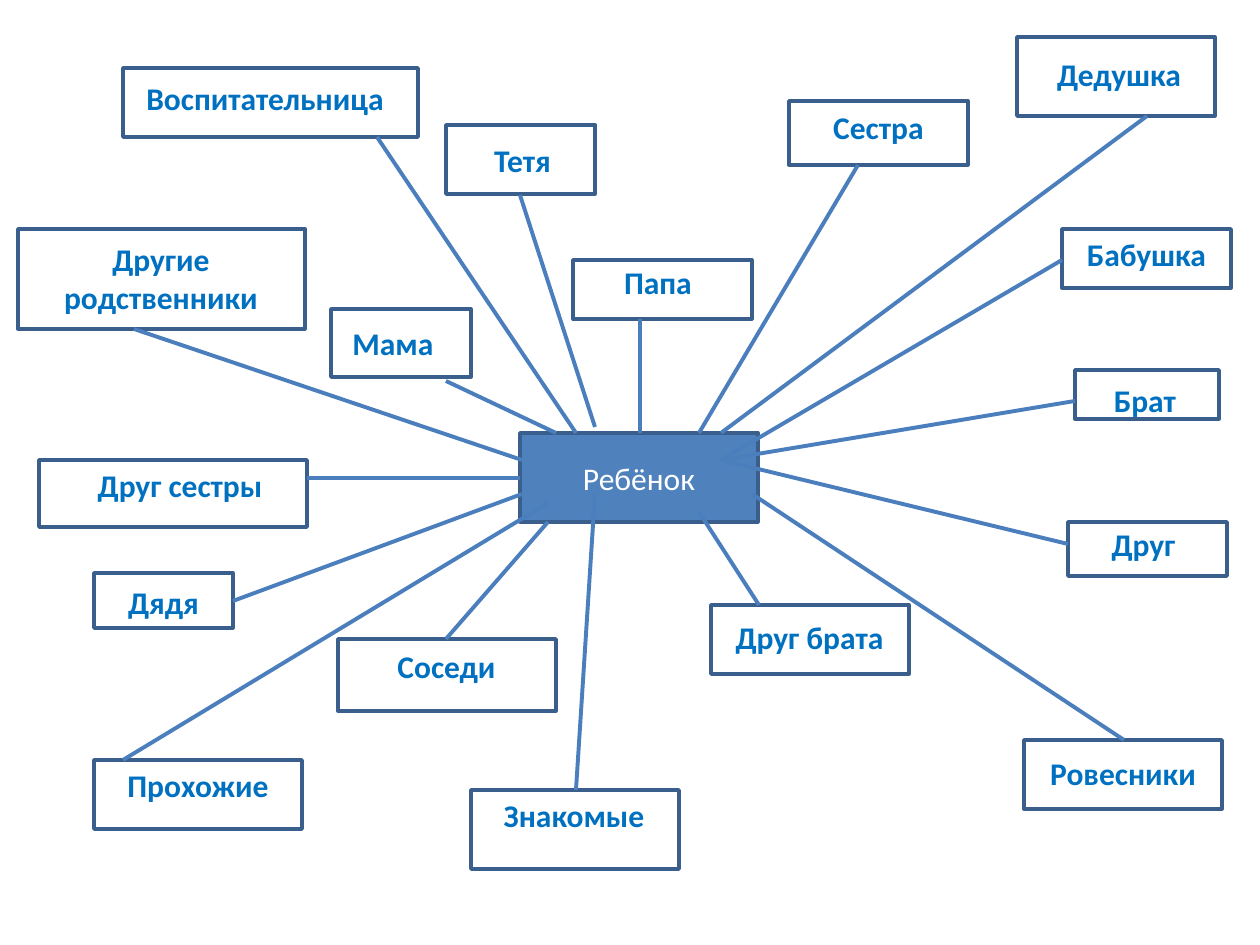
from dataclasses import dataclass
from typing import NamedTuple

from lxml import etree
from pptx import Presentation
from pptx.dml.color import RGBColor
from pptx.enum import shapes, text
from pptx.oxml.ns import qn
from pptx.util import Emu, Pt

PX = 914400 / 126


@dataclass(frozen=True)
class Theme:
    font: str = "Calibri"
    size: int = 18
    fill: str = "4F81BD"
    border: str = "3A5F8C"
    link: str = "4B7EBC"
    label: str = "0070C0"
    hub_label: str = "FFFFFF"
    border_width: float = 2
    link_width: float = 2.25


class Box(NamedTuple):
    x: int
    y: int
    w: int
    h: int


class Person(NamedTuple):
    name: str
    box: Box
    label: Box
    start: tuple
    end: tuple
    align: text.PP_ALIGN = text.PP_ALIGN.CENTER


THEME = Theme()
LEFT = text.PP_ALIGN.LEFT
HUB = Box(520, 433, 238, 89)
JUNCTION = (201, 27)

PEOPLE = [
    Person("Воспитательница", Box(123, 68, 295, 69), Box(11, 5, 276, 50), (254, 69), (56, 0), LEFT),
    Person("Другие родственники", Box(18, 229, 287, 100), Box(10, 5, 266, 89), (116, 100), (2, 27)),
    Person("Сестра", Box(789, 101, 179, 64), Box(0, 1, 179, 50), (69, 64), (179, 0)),
    Person("Дедушка", Box(1017, 37, 198, 79), Box(7, 12, 190, 50), (130, 79), (201, 0)),
    Person("Мама", Box(331, 309, 140, 68), Box(9, 9, 131, 50), (115, 72), (36, 0), LEFT),
    Person("Тетя", Box(446, 125, 149, 69), Box(23, 10, 107, 50), (74, 70), (75, -6)),
    Person("Папа", Box(573, 260, 179, 59), Box(3, -3, 164, 50), (67, 59), (120, 0)),
    Person("Бабушка", Box(1062, 229, 169, 59), Box(0, 0, 169, 50), (0, 31), JUNCTION),
    Person("Брат", Box(1075, 370, 144, 49), Box(0, 5, 140, 50), (0, 31), JUNCTION),
    Person("Друг", Box(1068, 522, 159, 54), Box(0, -3, 151, 50), (0, 22), JUNCTION),
    Person("Друг брата", Box(711, 605, 198, 69), Box(8, 7, 181, 50), (48, 0), (179, 79)),
    Person("Ровесники", Box(1024, 740, 198, 69), Box(0, 8, 198, 50), (100, 0), (232, 61)),
    Person("Соседи", Box(338, 639, 218, 72), Box(-3, 2, 223, 50), (108, 0), (28, 89)),
    Person("Знакомые", Box(471, 790, 208, 79), Box(-2, 0, 210, 50), (105, 0), (75, 61)),
    Person("Прохожие", Box(94, 760, 208, 69), Box(0, 0, 208, 50), (29, 0), (28, 70)),
    Person("Дядя", Box(94, 573, 139, 55), Box(0, 4, 139, 50), (139, 28), (2, 61)),
    Person("Друг сестры", Box(39, 460, 268, 67), Box(0, 0, 282, 50), (268, 18), (0, 45)),
]


def emu(*lengths):
    return [Emu(round(n * PX)) for n in lengths]


def offset(box, point):
    return box.x + point[0], box.y + point[1]


def write(sp, words, color, bold=False, align=text.PP_ALIGN.CENTER, anchor=text.MSO_ANCHOR.TOP):
    tf = sp.text_frame
    tf.word_wrap = True
    tf.vertical_anchor = anchor
    p = tf.paragraphs[0]
    p.alignment = align
    r = p.add_run()
    r.text = words
    r.font.name = THEME.font
    r.font.size = Pt(THEME.size)
    r.font.bold = bold
    r.font.color.rgb = RGBColor.from_string(color)


def add_box(slide, box, fill=None):
    sp = slide.shapes.add_shape(shapes.MSO_SHAPE.RECTANGLE, *emu(*box))
    sp.shadow.inherit = False
    if fill:
        sp.fill.solid()
        sp.fill.fore_color.rgb = RGBColor.from_string(fill)
    else:
        sp.fill.background()
    sp.line.color.rgb = RGBColor.from_string(THEME.border)
    sp.line.width = Pt(THEME.border_width)
    return sp


def add_link(slide, start, end):
    line = slide.shapes.add_connector(shapes.MSO_CONNECTOR.STRAIGHT, *emu(*start, *end))
    line.line.color.rgb = RGBColor.from_string(THEME.link)
    line.line.width = Pt(THEME.link_width)
    etree.SubElement(line._element.spPr, qn("a:effectLst"))


def add_hub(slide, box):
    sp = add_box(slide, box, THEME.fill)
    write(sp, "Ребёнок", THEME.hub_label, anchor=text.MSO_ANCHOR.MIDDLE)


def add_person(slide, person, hub):
    add_box(slide, person.box)
    add_link(slide, offset(person.box, person.start), offset(hub, person.end))
    x, y = offset(person.box, person.label)
    sp = slide.shapes.add_textbox(*emu(x, y, person.label.w, person.label.h))
    write(sp, person.name, THEME.label, bold=True, align=person.align)
    sp.text_frame.auto_size = text.MSO_AUTO_SIZE.SHAPE_TO_FIT_TEXT


def main():
    prs = Presentation()
    prs.slide_width, prs.slide_height = emu(1260, 945)
    slide = prs.slides.add_slide(prs.slide_layouts[6])
    add_hub(slide, HUB)
    for person in PEOPLE:
        add_person(slide, person, HUB)
    prs.save("out.pptx")


if __name__ == "__main__":
    main()
